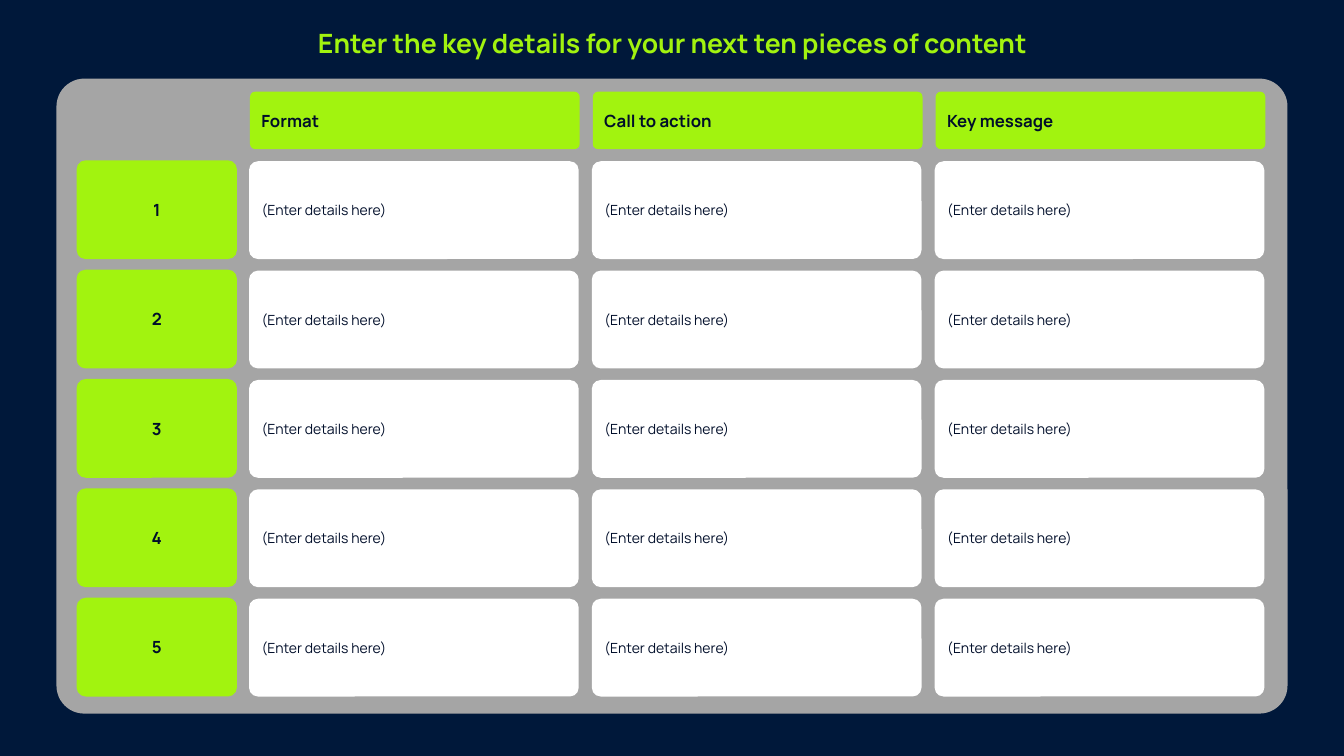
from dataclasses import dataclass

from pptx import Presentation
from pptx.dml.color import RGBColor
from pptx.enum import shapes, text
from pptx.util import Inches, Pt


@dataclass(frozen=True)
class Theme:
    font: str = "Manrope"
    navy: str = "00183A"
    ink: str = "000E2A"
    lime: str = "A2F30F"
    grey: str = "A5A5A5"
    white: str = "FFFFFF"
    title_size: int = 19
    label_size: int = 12
    detail_size: int = 10


THEME = Theme()
HEADINGS = ["Format", "Call to action", "Key message"]
PIECE_COUNT = 5
PROMPT = "(Enter details here)"
LEFT, CENTER = text.PP_ALIGN.LEFT, text.PP_ALIGN.CENTER


def write(frame, words, size, color, bold, align):
    paragraph = frame.paragraphs[0]
    paragraph.text = words
    paragraph.alignment = align
    paragraph.font.name = THEME.font
    paragraph.font.size = Pt(size)
    paragraph.font.bold = bold
    paragraph.font.color.rgb = RGBColor.from_string(color)


def add_card(slide, box, fill, corner=0.091):
    card = slide.shapes.add_shape(
        shapes.MSO_SHAPE.ROUNDED_RECTANGLE, *map(Inches, box))
    card.adjustments[0] = corner
    card.shadow.inherit = False
    card.fill.solid()
    card.fill.fore_color.rgb = RGBColor.from_string(fill)
    card.line.fill.background()
    return card


def add_text_card(slide, box, fill, words, size, bold, align=LEFT):
    frame = add_card(slide, box, fill).text_frame
    frame.word_wrap = True
    frame.vertical_anchor = text.MSO_ANCHOR.MIDDLE
    frame.margin_left = frame.margin_right = Inches(0.1)
    frame.margin_top = frame.margin_bottom = Inches(0.1)
    write(frame, words, size, THEME.ink, bold, align)


def add_title(slide, box):
    frame = slide.shapes.add_textbox(*map(Inches, box)).text_frame
    frame.word_wrap = True
    write(frame, "Enter the key details for your next ten pieces of content",
          THEME.title_size, THEME.lime, True, CENTER)


def add_content_planner(slide, box):
    left, top, _, _ = box
    column_width, column_pitch = 3.27, 3.4
    row_height, row_pitch = 0.98, 1.085
    number_left, first_column = left + 0.2, left + 1.91
    header_top, first_row = top + 0.13, top + 0.81

    # Backing panel
    add_card(slide, box, THEME.grey, corner=0.044)

    # Column headings
    for column, heading in enumerate(HEADINGS):
        x = first_column + column * column_pitch + 0.01
        add_text_card(slide, (x, header_top, column_width, 0.57), THEME.lime,
                      heading, THEME.label_size, True)

    # Numbered rows with one detail card per heading
    for row in range(PIECE_COUNT):
        y = first_row + row * row_pitch
        add_text_card(slide, (number_left, y, 1.59, row_height), THEME.lime,
                      str(row + 1), THEME.label_size, True, CENTER)
        for column in range(len(HEADINGS)):
            x = first_column + column * column_pitch
            add_text_card(slide, (x, y + 0.01, column_width, row_height - 0.01),
                          THEME.white, PROMPT, THEME.detail_size, False)


def main():
    deck = Presentation()
    deck.slide_width, deck.slide_height = Inches(13.33), Inches(7.5)
    slide = deck.slides.add_slide(deck.slide_layouts[6])
    slide.background.fill.solid()
    slide.background.fill.fore_color.rgb = RGBColor.from_string(THEME.navy)
    add_title(slide, (0.44, 0.22, 12.46, 0.42))
    add_content_planner(slide, (0.56, 0.78, 12.21, 6.3))
    deck.save("out.pptx")


if __name__ == "__main__":
    main()
